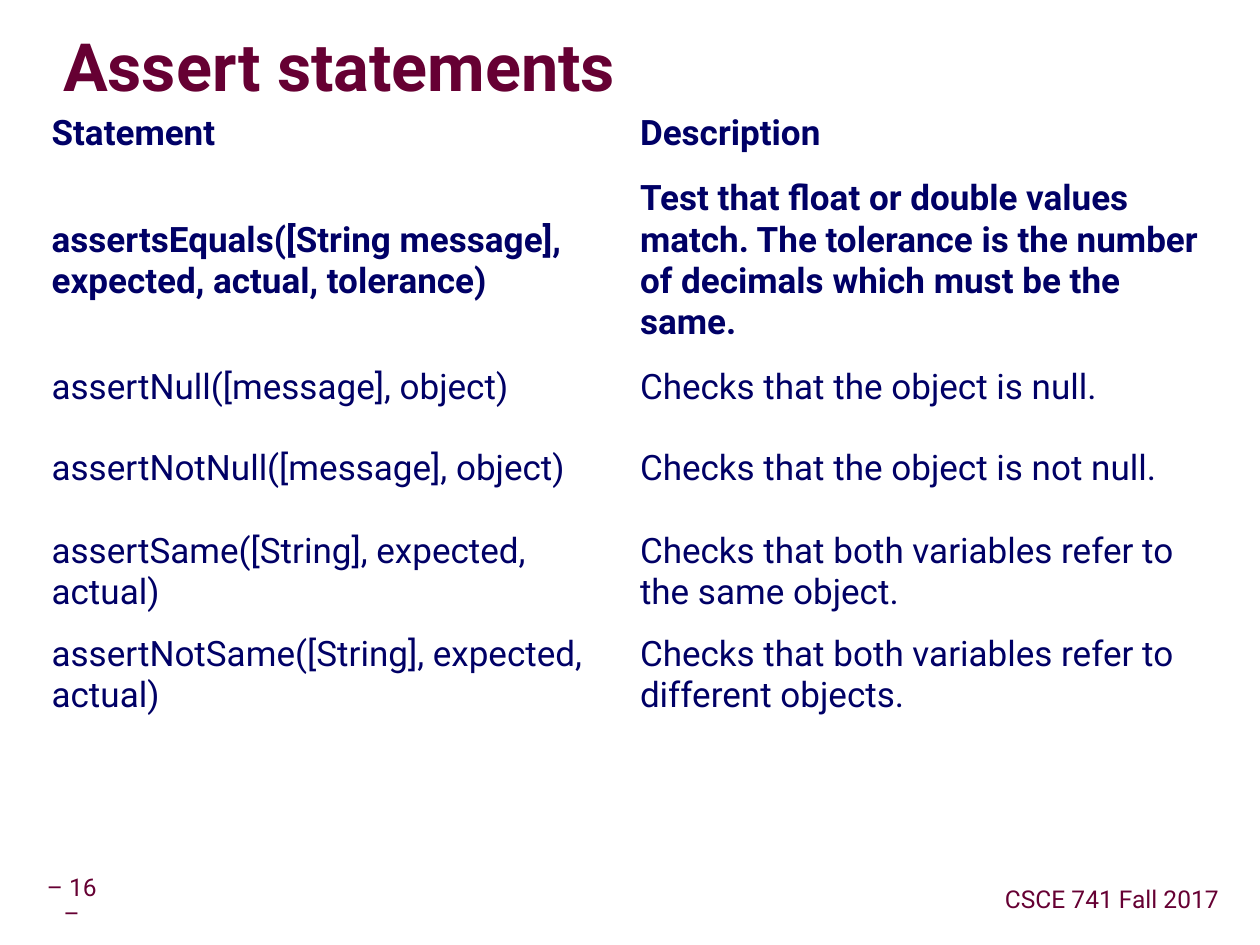
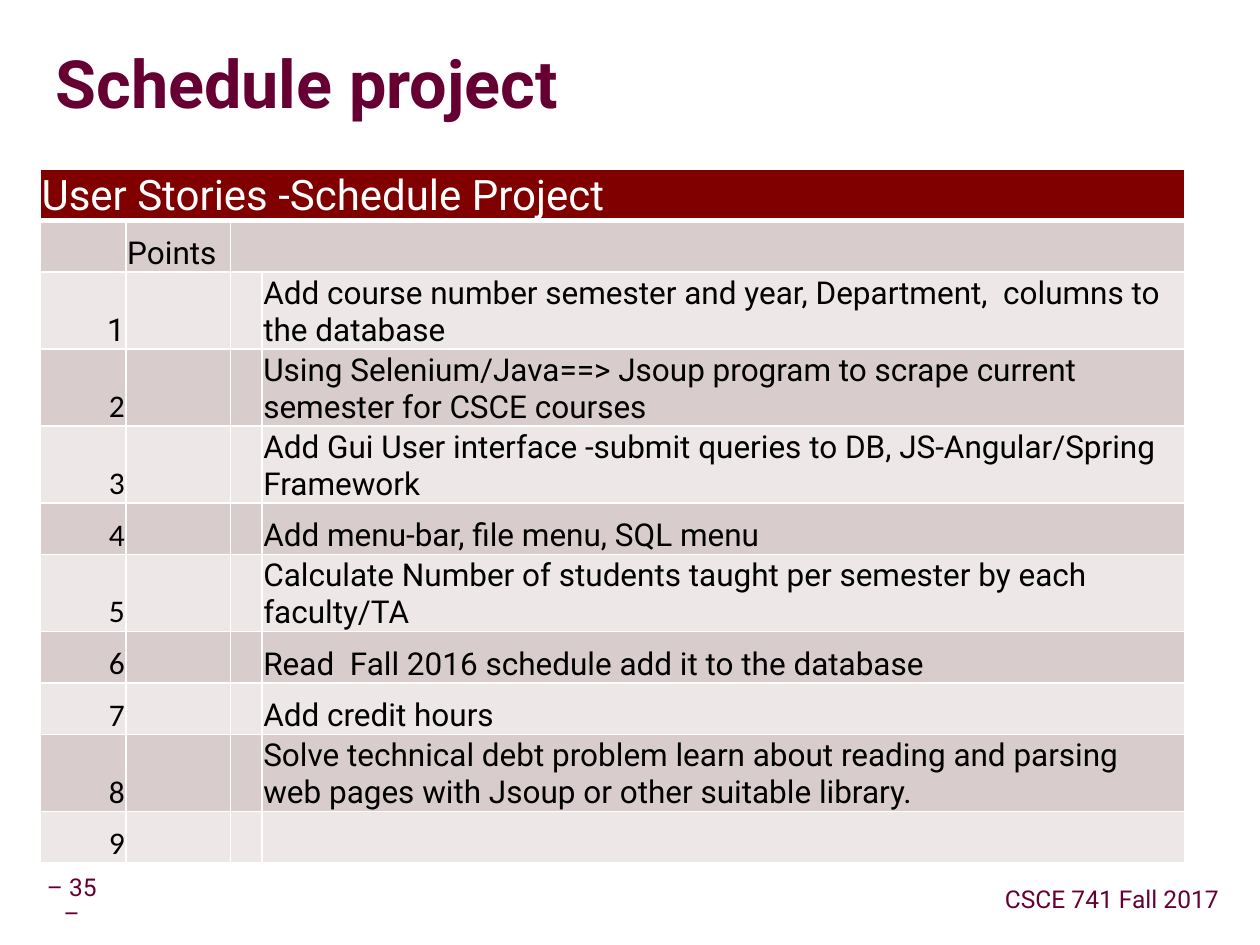
import dataclasses
import typing

import lxml.etree
import pptx
import pptx.dml.color
import pptx.enum.text
import pptx.oxml
import pptx.oxml.ns
import pptx.util

Inches = pptx.util.Inches
RGBColor = pptx.dml.color.RGBColor
ALIGN = pptx.enum.text.PP_ALIGN
ANCHOR = pptx.enum.text.MSO_ANCHOR

MAROON = RGBColor(0x66, 0x00, 0x33)
NAVY = RGBColor(0x00, 0x00, 0x66)
BLACK = RGBColor(0x00, 0x00, 0x00)
WHITE = RGBColor(0xFF, 0xFF, 0xFF)
HEADER_RED = RGBColor(0x80, 0x00, 0x00)
BAND_DARK = RGBColor(0xD8, 0xCC, 0xCC)
BAND_LIGHT = RGBColor(0xED, 0xE7, 0xE7)

MAIN_FONT = "Roboto"
NUMBER_FONT = "Calibri"
PLAIN_STYLE = "{2D5ABB26-0587-4C30-8999-92F81FD0307C}"
TITLE_LAYOUT = 5

STATEMENTS = [
    ("Statement", "Description"),
    ("assertsEquals([String message], expected, actual, tolerance)",
     "Test that float or double values match. The tolerance is the number of decimals which must be the same."),
    ("assertNull([message], object)", "Checks that the object is null."),
    ("assertNotNull([message], object)", "Checks that the object is not null."),
    ("assertSame([String], expected, actual)", "Checks that both variables refer to the same object."),
    ("assertNotSame([String], expected, actual)", "Checks that both variables refer to different objects."),
]
STORIES = [
    "Add course number semester and year, Department,  columns to the database",
    "Using Selenium/Java==> Jsoup program to scrape current semester for CSCE courses",
    "Add Gui User interface -submit queries to DB, JS-Angular/Spring Framework",
    "Add menu-bar, file menu, SQL menu",
    "Calculate Number of students taught per semester by each faculty/TA",
    "Read  Fall 2016 schedule add it to the database",
    "Add credit hours",
    "Solve technical debt problem learn about reading and parsing web pages with Jsoup or other suitable library.",
    "",
]


@dataclasses.dataclass(frozen=True)
class Area:
    left: float
    top: float
    width: float
    height: float

    def lengths(self) -> list[pptx.util.Length]:
        return [Inches(value) for value in dataclasses.astuple(self)]


@dataclasses.dataclass(frozen=True)
class Footer:
    area: Area
    side_inset: float
    wrap: bool


PAGE_NUMBER = Footer(Area(0.24, 7, 0.66, 0.31), 0.12, True)
COURSE = Footer(Area(7.88, 6.99, 1.89, 0.31), 0.05, False)


def write_text(frame: typing.Any, text: str, *, size: float, color: RGBColor,
               font: str = MAIN_FONT, bold: bool = False,
               align: ALIGN = ALIGN.LEFT, line_spacing: float = 1.0) -> typing.Any:
    para = frame.paragraphs[0]
    para.alignment = align
    para.line_spacing = line_spacing
    span = para.add_run()
    span.text = text
    span.font.size = pptx.util.Pt(size)
    span.font.bold = bold
    span.font.color.rgb = color
    span.font.name = font
    return span


def set_insets(target: typing.Any, left: float, top: float, right: float, bottom: float) -> None:
    target.margin_left, target.margin_top = Inches(left), Inches(top)
    target.margin_right, target.margin_bottom = Inches(right), Inches(bottom)


def add_text_shadow(span: typing.Any) -> None:
    effects = pptx.oxml.parse_xml(
        f'<a:effectLst {pptx.oxml.ns.nsdecls("a")}>'
        '<a:outerShdw dist="45720" dir="2700000"><a:srgbClr val="969696"/></a:outerShdw>'
        '</a:effectLst>')
    span.font._element.find(pptx.oxml.ns.qn("a:solidFill")).addnext(effects)


def add_footer(page: typing.Any, footer: Footer, text: str) -> None:
    box = page.shapes.add_textbox(*footer.area.lengths())
    frame = box.text_frame
    frame.word_wrap = footer.wrap
    frame.vertical_anchor = ANCHOR.MIDDLE
    set_insets(frame, footer.side_inset, 0.05, footer.side_inset, 0.05)
    write_text(frame, text, size=14, color=MAROON, align=ALIGN.CENTER, line_spacing=0.9)


def add_page(deck: typing.Any, title: str, title_area: Area, number: int) -> typing.Any:
    page = deck.slides.add_slide(deck.slide_layouts[TITLE_LAYOUT])
    add_footer(page, PAGE_NUMBER, f"– {number} –")
    add_footer(page, COURSE, "CSCE 741 Fall 2017")
    box = page.shapes.title
    box.left, box.top, box.width, box.height = title_area.lengths()
    frame = box.text_frame
    frame.auto_size = pptx.enum.text.MSO_AUTO_SIZE.NONE
    frame.vertical_anchor = ANCHOR.MIDDLE
    set_insets(frame, 0, 0, 0, 0)
    add_text_shadow(write_text(frame, title, size=38, color=MAROON, bold=True, line_spacing=0.87))
    return page


def add_plain_table(page: typing.Any, left: float, top: float,
                    widths: list[float], heights: list[float]) -> typing.Any:
    area = Area(left, top, sum(widths), sum(heights))
    table = page.shapes.add_table(len(heights), len(widths), *area.lengths()).table
    table.first_row = table.horz_banding = False
    table._tbl.tblPr.find(pptx.oxml.ns.qn("a:tableStyleId")).text = PLAIN_STYLE
    for column, width in zip(table.columns, widths):
        column.width = Inches(width)
    for row, height in zip(table.rows, heights):
        row.height = Inches(height)
    return table


def set_borders(cell: typing.Any, color: RGBColor, bottom: float = 1, top: float = 1) -> None:
    properties = cell._tc.get_or_add_tcPr()
    sides = {"lnL": 1, "lnR": 1, "lnT": top, "lnB": bottom}
    for position, (side, points) in enumerate(sides.items()):
        line = lxml.etree.Element(pptx.oxml.ns.qn(f"a:{side}"), w=str(pptx.util.Pt(points)))
        fill = lxml.etree.SubElement(line, pptx.oxml.ns.qn("a:solidFill"))
        lxml.etree.SubElement(fill, pptx.oxml.ns.qn("a:srgbClr"), val=str(color))
        properties.insert(position, line)


def build_assert_page(deck: typing.Any) -> None:
    page = add_page(deck, "Assert statements", Area(0.5, 0.17, 9, 0.78), 16)
    table = add_plain_table(page, 0.33, 0.83, [4.67] * 2, [0.46, 1.56, 0.46, 0.82, 0.82, 0.82])
    for row, texts in enumerate(STATEMENTS):
        for column, text in enumerate(texts):
            cell = table.cell(row, column)
            cell.fill.background()
            cell.vertical_anchor = ANCHOR.MIDDLE
            set_insets(cell, 0.08, 0.04, 0.08, 0.04)
            write_text(cell.text_frame, text, size=20, color=NAVY, bold=row < 2)


def build_schedule_page(deck: typing.Any) -> None:
    page = add_page(deck, "Schedule project", Area(0.44, 0.27, 9.53, 0.85), 35)
    table = add_plain_table(page, 0.32, 1.34, [0.68, 0.83, 0.25, 7.32], [0.41] * (len(STORIES) + 2))
    for row in range(len(table.rows)):
        band = HEADER_RED if row == 0 else BAND_DARK if row % 2 else BAND_LIGHT
        for column in range(len(table.columns)):
            cell = table.cell(row, column)
            cell.fill.solid()
            cell.fill.fore_color.rgb = band
            cell.vertical_anchor = ANCHOR.BOTTOM
            set_insets(cell, 0.01, 0.01, 0.01, 0)
            set_borders(cell, WHITE, bottom=3 if row == 0 else 1, top=3 if row == 1 else 1)
    table.cell(0, 0).merge(table.cell(0, 3))
    table.cell(1, 2).merge(table.cell(1, 3))
    write_text(table.cell(0, 0).text_frame, "User Stories -Schedule Project", size=24, color=WHITE)
    write_text(table.cell(1, 1).text_frame, "Points", size=18, color=BLACK)
    for number, story in enumerate(STORIES, 1):
        font = MAIN_FONT if number == 1 else NUMBER_FONT
        write_text(table.cell(number + 1, 0).text_frame, str(number),
                   size=18, color=BLACK, font=font, align=ALIGN.RIGHT)
        if story:
            write_text(table.cell(number + 1, 3).text_frame, story, size=18, color=BLACK)


def main() -> None:
    deck = pptx.Presentation()
    deck.slide_width, deck.slide_height = Inches(10), Inches(7.5)
    build_assert_page(deck)
    build_schedule_page(deck)
    deck.save("out.pptx")


if __name__ == "__main__":
    main()
